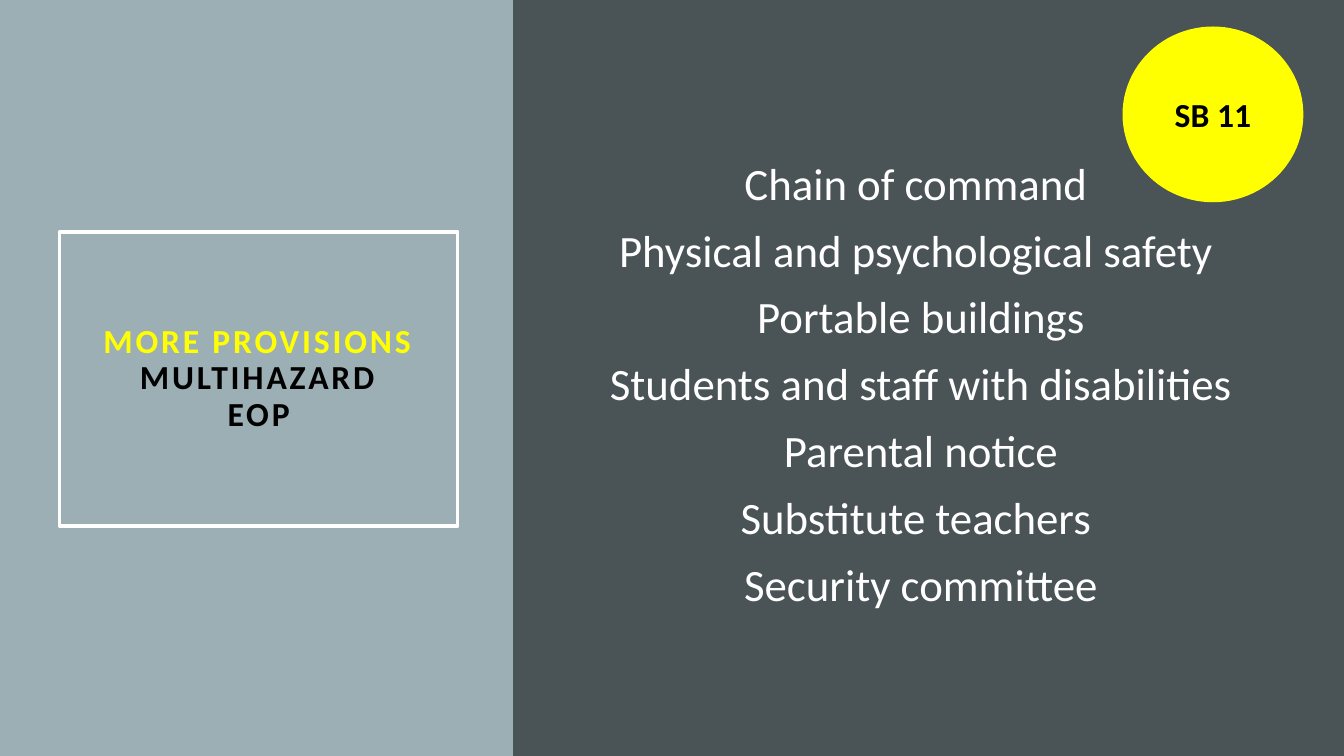
from pptx import Presentation
from pptx.dml.color import RGBColor
from pptx.enum.shapes import MSO_SHAPE
from pptx.enum.text import MSO_ANCHOR, PP_ALIGN
from pptx.util import Inches, Pt

RECTANGLE, OVAL = MSO_SHAPE.RECTANGLE, MSO_SHAPE.OVAL
MIDDLE, CENTER = MSO_ANCHOR.MIDDLE, PP_ALIGN.CENTER

FONT = "Calibri"
MIST, SLATE, YELLOW, WHITE, BLACK = "9BAFB5", "4A5356", "FFFF00", "FFFFFF", "000000"
HEADING = [("MORE PROVISIONS", YELLOW), ("MULTIHAZARD", BLACK), ("EOP", BLACK)]
PROVISIONS = [
    "Chain of command ",
    "Physical and psychological safety ",
    "Portable buildings",
    "Students and staff with disabilities",
    "Parental notice",
    "Substitute teachers ",
    "Security committee",
]
BILL = "SB 11"
WIDTH, HEIGHT, SPLIT = 13.33, 7.5, 5.09


def color(hex_value):
    return RGBColor.from_string(hex_value)


def add_block(slide, kind, box, fill=None, line=None, line_width=1):
    block = slide.shapes.add_shape(kind, *map(Inches, box))
    block.shadow.inherit = False
    if fill:
        block.fill.solid()
        block.fill.fore_color.rgb = color(fill)
    else:
        block.fill.background()
    if line:
        block.line.color.rgb = color(line)
        block.line.width = Pt(line_width)
    else:
        block.line.fill.background()
    return block


def style(paragraph, size, hex_value, bold=False):
    paragraph.alignment = CENTER
    paragraph.font.name = FONT
    paragraph.font.size = Pt(size)
    paragraph.font.bold = bold
    paragraph.font.color.rgb = color(hex_value)


def add_heading(slide):
    frame = add_block(slide, RECTANGLE, (0.59, 2.3, 3.95, 2.92), line=WHITE, line_width=2.5).text_frame
    frame.word_wrap = True
    frame.vertical_anchor = MIDDLE
    frame.margin_left = frame.margin_right = Inches(0.2)
    frame.margin_top = frame.margin_bottom = Inches(0.2)
    paragraph = frame.paragraphs[0]
    style(paragraph, 24, BLACK, bold=True)
    paragraph.line_spacing = 0.9
    for index, (words, hex_value) in enumerate(HEADING):
        if index:
            paragraph.add_line_break()
        run = paragraph.add_run()
        run.text = words
        run.font.color.rgb = color(hex_value)
        run.font._element.set("spc", "200")


def add_provisions(slide):
    frame = slide.shapes.add_textbox(*map(Inches, (5.95, 1.33, 6.37, 4.94))).text_frame
    frame.word_wrap = True
    frame.vertical_anchor = MIDDLE
    for index, provision in enumerate(PROVISIONS):
        paragraph = frame.add_paragraph() if index else frame.paragraphs[0]
        paragraph.text = provision
        style(paragraph, 32, WHITE)
        if index:
            paragraph.space_before = Pt(9.4)


def add_bill_badge(slide):
    frame = add_block(slide, OVAL, (11.14, 0.27, 1.78, 1.73), YELLOW, YELLOW).text_frame
    frame.vertical_anchor = MIDDLE
    frame.text = BILL
    style(frame.paragraphs[0], 24, BLACK, bold=True)


def main():
    deck = Presentation()
    deck.slide_width, deck.slide_height = Inches(WIDTH), Inches(HEIGHT)
    slide = deck.slides.add_slide(deck.slide_layouts[6])
    slide.background.fill.solid()
    slide.background.fill.fore_color.rgb = color(SLATE)
    add_block(slide, RECTANGLE, (0, 0, SPLIT, HEIGHT), MIST)
    add_heading(slide)
    add_block(slide, RECTANGLE, (SPLIT, 0, WIDTH - SPLIT, HEIGHT), SLATE)
    add_provisions(slide)
    add_bill_badge(slide)
    deck.save("out.pptx")


if __name__ == "__main__":
    main()
